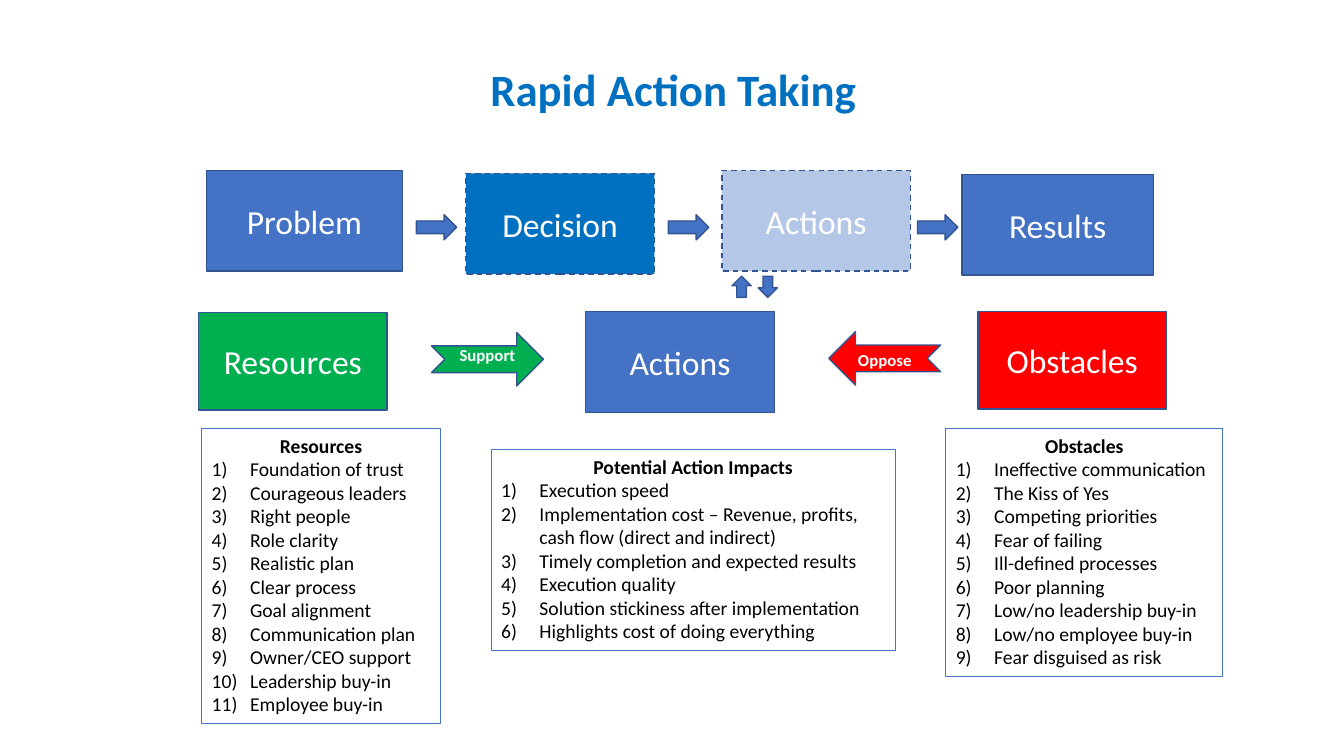
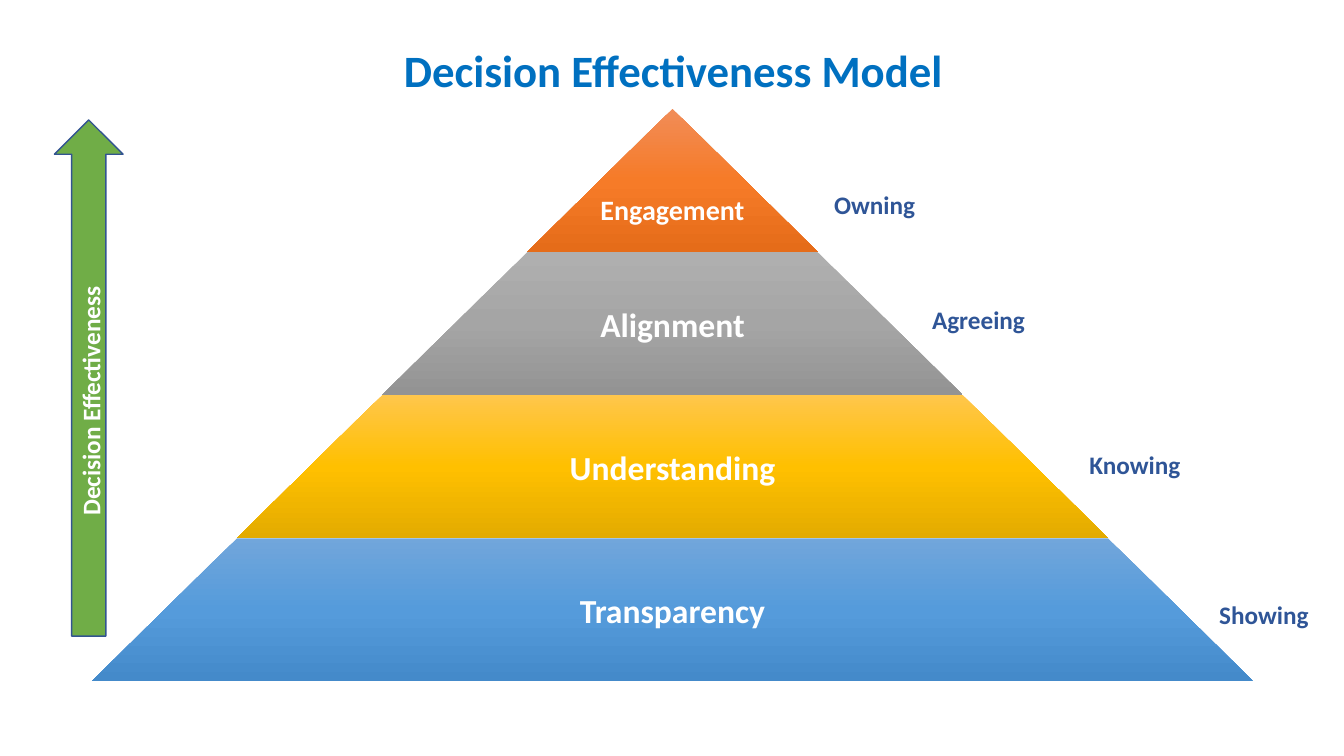
"""Build two slides on rapid action taking and decision effectiveness."""
import copy

import pptx
import pptx.dml.color
import pptx.enum.dml
import pptx.enum.shapes
import pptx.enum.text
import pptx.oxml
import pptx.oxml.ns
import pptx.util

Inches = pptx.util.Inches
Pt = pptx.util.Pt
SHAPE = pptx.enum.shapes.MSO_SHAPE
ALIGN = pptx.enum.text.PP_ALIGN
ANCHOR = pptx.enum.text.MSO_ANCHOR
DASH = pptx.enum.dml.MSO_LINE.DASH
qn = pptx.oxml.ns.qn

BLUE, DEEP, PALE = "4472C4", "0070C0", "B4C7E7"
EDGE, NAVY = "325491", "2F5597"
GREEN, RED, LEAF = "00B050", "FF0000", "70AD47"
WHITE, BLACK = "FFFFFF", "000000"


def color(code):
    """Turn a hex string into a colour."""
    return pptx.dml.color.RGBColor.from_string(code)


class Deck:
    """Hold the style and the current slide."""

    face = "Calibri"

    def __init__(self):
        """Start an empty wide deck."""
        self.prs = pptx.Presentation()
        self.prs.slide_width = Inches(13.33)
        self.prs.slide_height = Inches(7.5)

    def page(self, layout, title, height):
        """Add a slide with its title."""
        self.slide = self.prs.slides.add_slide(self.prs.slide_layouts[layout])
        head, *self.spare = self.slide.placeholders
        self.place(head, 0.91, 0.37, 11.54, height)
        self.letter(head, title, 32, DEEP, True)
        head.text_frame.paragraphs[0].line_spacing = 0.9

    def place(self, item, left, top, width, height):
        """Move and size an item."""
        item.left, item.top = Inches(left), Inches(top)
        item.width, item.height = Inches(width), Inches(height)

    def style(self, font, size, code, bold):
        """Format a font."""
        font.name, font.size, font.bold = self.face, Pt(size), bold
        font.color.rgb = color(code)

    def letter(self, item, text, size, code=WHITE, bold=False):
        """Put centred text in an item."""
        frame = item.text_frame
        frame.text = text
        frame.word_wrap = True
        frame.vertical_anchor = ANCHOR.MIDDLE
        para = frame.paragraphs[0]
        para.alignment = ALIGN.CENTER
        self.style(para.runs[0].font, size, code, bold)

    def shape(self, kind, box, fill=BLUE, text="", dash=False, turn=0):
        """Draw an outlined shape."""
        item = self.slide.shapes.add_shape(kind, *map(Inches, box))
        item.shadow.inherit = False
        item.rotation = turn
        item.fill.solid()
        item.fill.fore_color.rgb = color(fill)
        item.line.color.rgb = color(EDGE)
        item.line.width = Pt(1)
        if dash:
            item.line.dash_style = DASH
        if text:
            self.letter(item, text, 24)

    def label(self, box, text, size, code=WHITE, turn=0):
        """Add bold text without a frame."""
        item = self.slide.shapes.add_textbox(*map(Inches, box))
        item.rotation = turn
        self.letter(item, text, size, code, True)

    def tier(self, box, hues):
        """Draw one pyramid tier with a vertical gradient."""
        item = self.slide.shapes.add_shape(SHAPE.TRAPEZOID, *map(Inches, box))
        item.shadow.inherit = False
        item.adjustments[0] = 1.015
        item.line.fill.background()
        item.fill.gradient()
        item.fill.gradient_angle = 270
        stops = next(item._element.iter(qn("a:gsLst")))
        stops.append(copy.deepcopy(stops[-1]))
        for spot, stop, hue in zip((0, 0.5, 1), item.fill.gradient_stops, hues):
            stop.position = spot
            stop.color.rgb = color(hue)

    def panel(self, box, head, lines):
        """Fill a body placeholder with a numbered list."""
        item = self.spare.pop(0)
        self.place(item, *box)
        item.line.color.rgb = color(BLUE)
        item.line.width = Pt(0.75)
        frame = item.text_frame
        frame.text = "\n".join([head, *lines])
        frame.word_wrap = True
        frame.auto_size = pptx.enum.text.MSO_AUTO_SIZE.NONE
        frame.vertical_anchor = ANCHOR.TOP
        for num, para in enumerate(frame.paragraphs):
            para.space_before = Pt(0)
            para.alignment = ALIGN.LEFT if num else ALIGN.CENTER
            tag = "a:buAutoNum" if num else "a:buNone"
            mark = pptx.oxml.parse_xml(f"<{tag} {pptx.oxml.ns.nsdecls('a')}/>")
            props = para._p.get_or_add_pPr()
            dent = Inches(0.38) if num else 0
            props.set("marL", str(dent))
            props.set("indent", str(-dent))
            if num:
                mark.set("type", "arabicParenR")
            props.append(mark)
            self.style(para.runs[0].font, 14, BLACK, num == 0)

    def clean(self):
        """Remove unused placeholders."""
        for item in self.spare:
            item._element.getparent().remove(item._element)


def action(deck):
    """Build the action flow slide."""
    deck.page(4, "Rapid Action Taking", 1.08)
    for left, top, width, height, fill, text, dash in (
        (2.05, 1.69, 1.94, 1, BLUE, "Problem", False),
        (4.62, 1.72, 1.87, 1, DEEP, "Decision", True),
        (7.16, 1.69, 1.87, 1, PALE, "Actions", True),
        (9.54, 1.73, 1.9, 1, BLUE, "Results", False),
        (1.97, 3.1, 1.87, 0.97, GREEN, "Resources", False),
        (5.81, 3.09, 1.87, 1, BLUE, "Actions", False),
        (9.7, 3.09, 1.87, 0.97, RED, "Obstacles", False),
    ):
        deck.shape(SHAPE.RECTANGLE, (left, top, width, height), fill, text, dash)
    for left in (4.13, 6.63, 9.1):
        deck.shape(SHAPE.RIGHT_ARROW, (left, 2.13, 0.4, 0.25))
    for kind, left in ((SHAPE.UP_ARROW, 7.26), (SHAPE.DOWN_ARROW, 7.52)):
        deck.shape(kind, (left, 2.74, 0.19, 0.21))
    for left, top, fill, turn, text, start, high in (
        (4.28, 3.3, GREEN, 0, "Support", 4.35, 3.37),
        (8.22, 3.29, RED, 180, "Oppose", 8.29, 3.42),
    ):
        box = (left, top, 1.11, 0.53)
        deck.shape(SHAPE.NOTCHED_RIGHT_ARROW, box, fill, turn=turn)
        deck.label((start, high, 0.97, 0.3), text, 12)
    deck.panel((2, 4.25, 2.37, 2.93), "Resources", (
        "Foundation of trust", "Courageous leaders", "Right people",
        "Role clarity", "Realistic plan", "Clear process", "Goal alignment",
        "Communication plan", "Owner/CEO support", "Leadership buy-in",
        "Employee buy-in"))
    deck.panel((4.87, 4.46, 4.01, 1.99), "Potential Action Impacts", (
        "Execution speed",
        "Implementation cost – Revenue, profits, cash flow (direct and indirect)",
        "Timely completion and expected results", "Execution quality",
        "Solution stickiness after implementation",
        "Highlights cost of doing everything"))
    deck.panel((9.38, 4.25, 2.75, 2.46), "Obstacles", (
        "Ineffective communication", "The Kiss of Yes", "Competing priorities",
        "Fear of failing", "Ill-defined processes", "Poor planning",
        "Low/no leadership buy-in", "Low/no employee buy-in",
        "Fear disguised as risk"))
    deck.clean()


def model(deck):
    """Build the pyramid slide."""
    deck.page(5, "Decision Effectiveness Model", 0.71)
    mid, rise, step = 6.67, 1.42, 2.88
    tiers = (
        ("Engagement", 20, 0.57, ("F18C57", "F67B28", "E56C19"),
         "Owning", 8.08, 1.83),
        ("Alignment", 24, 0, ("AFAFAF", "A5A5A5", "939393"),
         "Agreeing", 9.11, 2.97),
        ("Understanding", 24, 0, ("FFC64B", "FFC000", "E3AB00"),
         "Knowing", 10.66, 4.41),
        ("Transparency", 24, 0, ("71A6DB", "559BDB", "448ACA"),
         "Showing", 11.94, 5.9),
    )
    for row, (name, size, drop, hues, side, left, high) in enumerate(tiers):
        top, width = 1.08 + rise * row, step * (row + 1)
        deck.tier((mid - width / 2, top, width, rise), hues)
        box = (mid - step / 2, top + drop, step, rise - drop)
        deck.label(box, name, size)
        deck.label((left, high, 1.19, 0.4), side, 18, NAVY)
    deck.shape(SHAPE.UP_ARROW, (0.54, 1.19, 0.68, 5.12), LEAF)
    deck.label((-0.62, 3.78, 3.03, 0.4), "Decision Effectiveness", 18, turn=270)


def main():
    """Build and save the deck."""
    deck = Deck()
    action(deck)
    model(deck)
    deck.prs.save("out.pptx")


if __name__ == "__main__":
    main()
